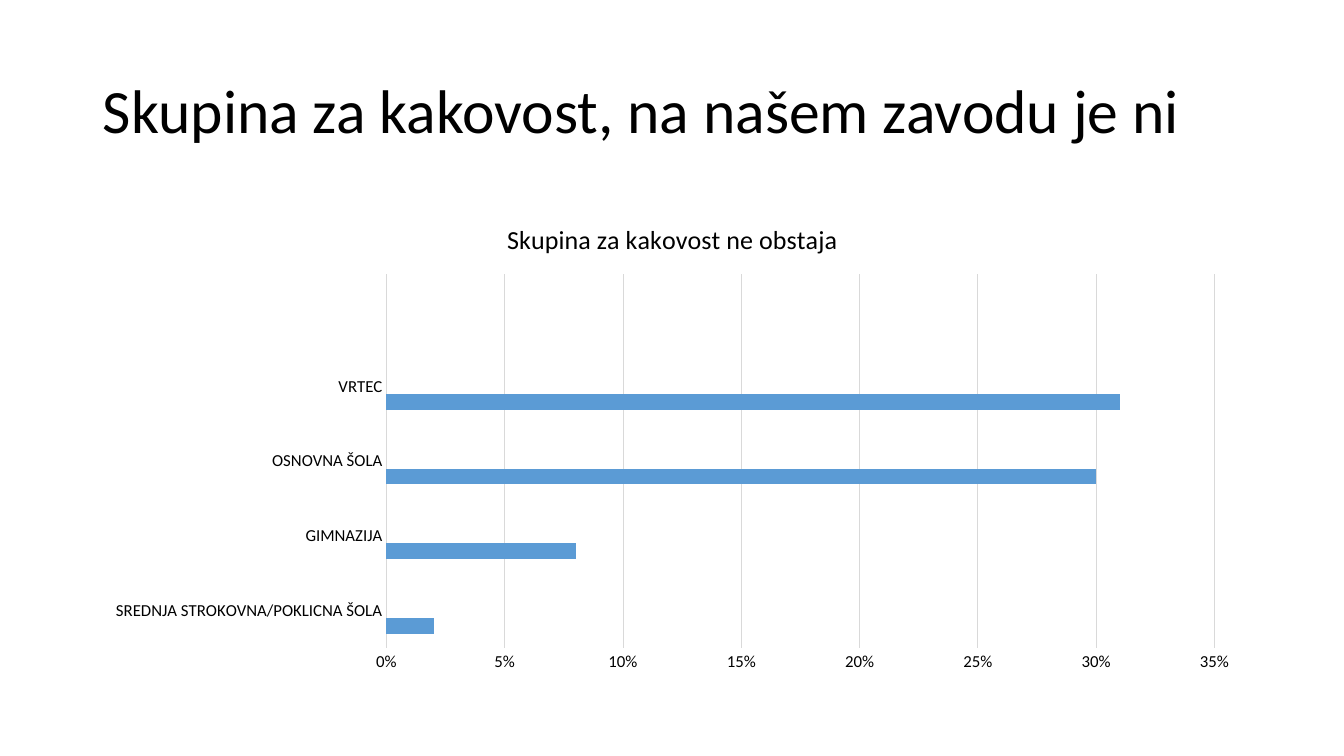
from dataclasses import dataclass

from pptx import Presentation
from pptx.chart.chart import Chart
from pptx.chart.data import CategoryChartData
from pptx.dml.color import RGBColor
from pptx.enum.chart import XL_CHART_TYPE as ChartType, XL_TICK_MARK as TickMark
from pptx.enum.text import MSO_ANCHOR as Anchor, PP_ALIGN as Align
from pptx.slide import Slide
from pptx.text.text import Font
from pptx.util import Inches, Pt

BLACK = RGBColor(0x00, 0x00, 0x00)
GRID_GREY = RGBColor(0xD9, 0xD9, 0xD9)
BLUE = RGBColor(0x5B, 0x9B, 0xD5)
ORANGE = RGBColor(0xED, 0x7D, 0x31)
GREY = RGBColor(0xA5, 0xA5, 0xA5)

FONT_NAME = "Calibri"
TITLE = "Skupina za kakovost, na našem zavodu je ni"
CHART_TITLE = "Skupina za kakovost ne obstaja"
LEFT, WIDTH = Inches(0.92), Inches(11.5)

# The last category is blank and leaves an empty band at the top.
CATEGORIES = ["SREDNJA STROKOVNA/POKLICNA ŠOLA", "GIMNAZIJA", "OSNOVNA ŠOLA", "VRTEC", ""]


@dataclass
class BarSeries:
    name: str
    values: list[float | None]
    color: RGBColor


NO_VALUES = [None] * len(CATEGORIES)
BAR_SERIES = [
    BarSeries("Series 1", [0.02, 0.08, 0.3, 0.31, None], BLUE),
    BarSeries("Series 2", NO_VALUES, ORANGE),
    BarSeries("Series 3", NO_VALUES, GREY),
]


def set_attributes(target: object, values: dict[str, object]) -> None:
    for name, value in values.items():
        setattr(target, name, value)


def format_font(font: Font, size: float) -> None:
    set_attributes(font, {"name": FONT_NAME, "size": Pt(size), "bold": False})
    font.color.rgb = BLACK


def add_title(slide: Slide) -> None:
    title = slide.shapes.title
    set_attributes(title, {"left": LEFT, "top": Inches(0.4),
                           "width": WIDTH, "height": Inches(1.45)})
    frame = title.text_frame
    set_attributes(frame, {"text": TITLE, "word_wrap": True,
                           "vertical_anchor": Anchor.MIDDLE})
    paragraph = frame.paragraphs[0]
    set_attributes(paragraph, {"alignment": Align.LEFT, "line_spacing": 0.9})
    format_font(paragraph.runs[0].font, 44)


def format_axes(chart: Chart) -> None:
    category_axis, value_axis = chart.category_axis, chart.value_axis
    for axis in (category_axis, value_axis):
        set_attributes(axis, {"major_tick_mark": TickMark.NONE,
                              "minor_tick_mark": TickMark.NONE})
        format_font(axis.tick_labels.font, 12)
    set_attributes(value_axis, {"minimum_scale": 0, "maximum_scale": 0.35,
                                "major_unit": 0.05, "has_major_gridlines": True})
    set_attributes(value_axis.tick_labels, {"number_format": "0%",
                                            "number_format_is_linked": False})
    value_axis.format.line.fill.background()
    for line in (category_axis.format.line, value_axis.major_gridlines.format.line):
        line.color.rgb = GRID_GREY
        line.width = Pt(0.75)


def add_bar_chart(slide: Slide) -> None:
    data = CategoryChartData(number_format="0%")
    data.categories = CATEGORIES
    for series in BAR_SERIES:
        data.add_series(series.name, series.values)
    chart = slide.shapes.add_chart(ChartType.BAR_CLUSTERED, LEFT, Inches(2),
                                   WIDTH, Inches(4.76), data).chart
    set_attributes(chart, {"has_legend": False, "has_title": True})
    format_font(chart.font, 10)

    chart_title = chart.chart_title
    chart_title.include_in_layout = False
    chart_title.text_frame.text = CHART_TITLE
    format_font(chart_title.text_frame.paragraphs[0].runs[0].font, 18.6)

    plot = chart.plots[0]
    set_attributes(plot, {"gap_width": 182, "overlap": 0, "vary_by_categories": False})
    for drawn, series in zip(plot.series, BAR_SERIES):
        drawn.invert_if_negative = False
        drawn.format.fill.solid()
        drawn.format.fill.fore_color.rgb = series.color
    format_axes(chart)


def main() -> None:
    presentation = Presentation()
    set_attributes(presentation, {"slide_width": Inches(13.33),
                                  "slide_height": Inches(7.5)})
    slide = presentation.slides.add_slide(
        presentation.slide_layouts.get_by_name("Title Only"))
    add_title(slide)
    add_bar_chart(slide)
    presentation.save("out.pptx")


if __name__ == "__main__":
    main()
